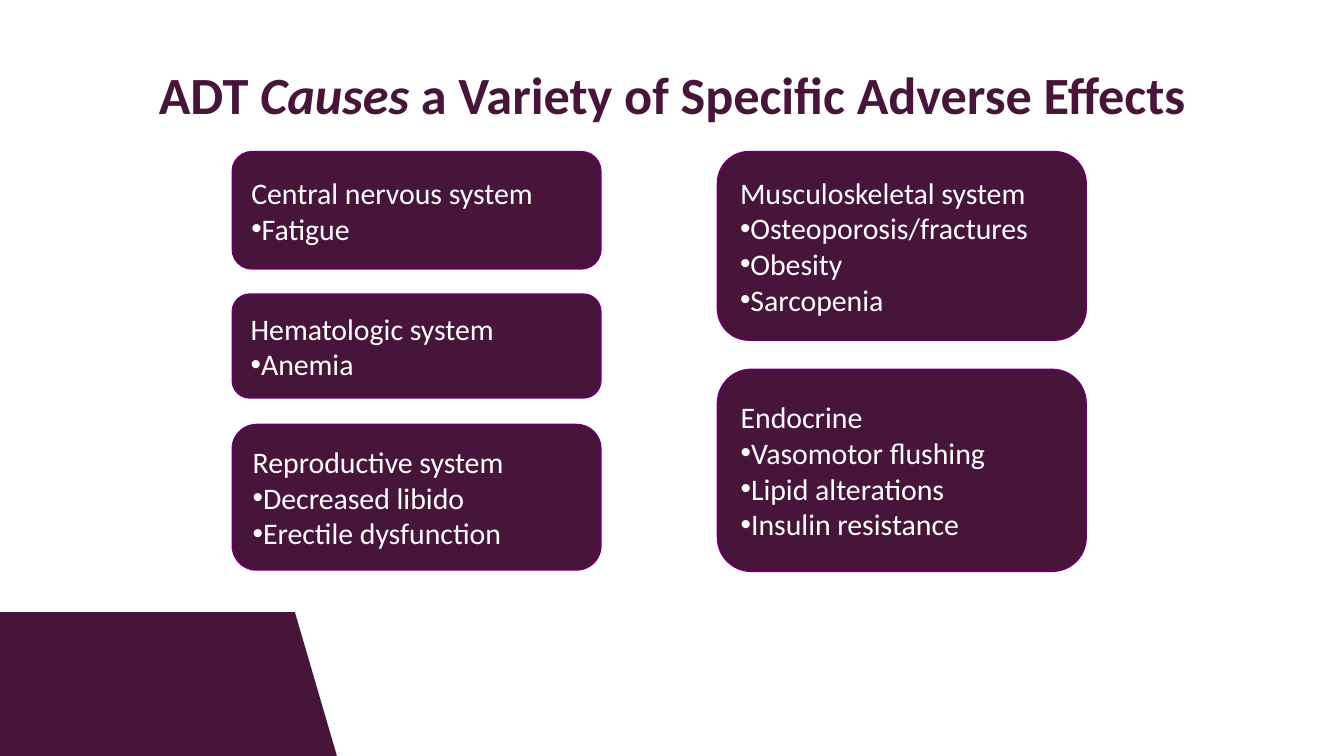
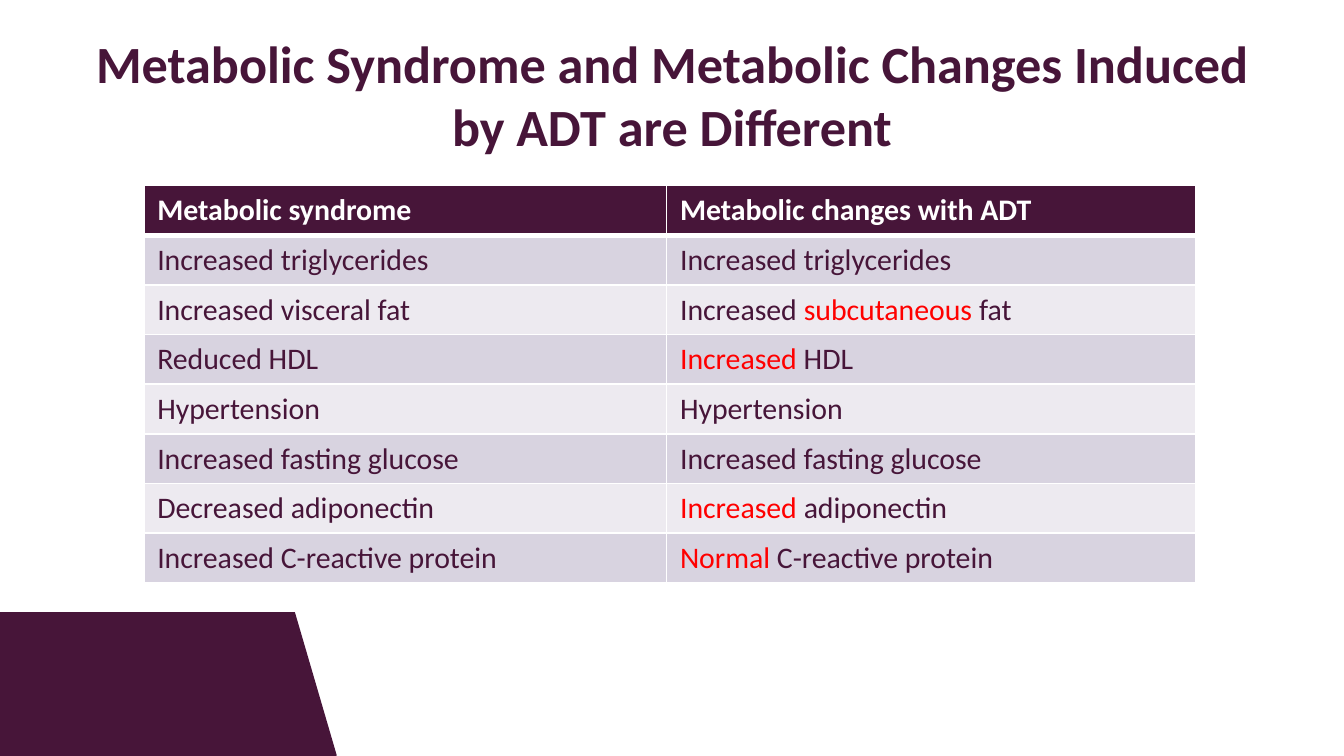
from lxml.etree import SubElement
from pptx import Presentation
from pptx.dml.color import RGBColor
from pptx.enum.shapes import MSO_SHAPE
from pptx.enum.text import MSO_ANCHOR, PP_ALIGN
from pptx.oxml.ns import qn
from pptx.util import Inches, Pt

PLUM = "471539"
EDGE = "660066"
WHITE = "FFFFFF"
RED = "FF0000"
BANDS = ["D8D3E0", "EDEAF0"]
FONT = "Calibri"

LEFT = 1.73
RIGHT = 5.34
WIDTH = 2.74
PANELS = [
    (LEFT, 1.13, 0.87, ["Central nervous system", "Fatigue"]),
    (LEFT, 3.16, 1.08, ["Reproductive system", "Decreased libido",
                        "Erectile dysfunction"]),
    (RIGHT, 1.13, 1.4, ["Musculoskeletal system", "Osteoporosis/fractures",
                        "Obesity", "Sarcopenia"]),
    (RIGHT, 2.75, 1.5, ["Endocrine", "Vasomotor flushing",
                        "Lipid alterations", "Insulin resistance"]),
    (LEFT, 2.19, 0.77, ["Hematologic system", "Anemia"]),
]

COLS = [3.89, 3.94]
ROW = 0.37
ROWS = [
    ("Metabolic syndrome", "Metabolic changes with ADT"),
    ("Increased triglycerides", "Increased triglycerides"),
    ("Increased visceral fat", "Increased *subcutaneous* fat"),
    ("Reduced HDL", "*Increased* HDL"),
    ("Hypertension", "Hypertension"),
    ("Increased fasting glucose", "Increased fasting glucose"),
    ("Decreased adiponectin", "*Increased *adiponectin"),
    ("Increased C-reactive protein", "*Normal* C-reactive protein"),
]


def paint(target, color):
    target.solid()
    target.fore_color.rgb = RGBColor.from_string(color)


def style(font, size, color, bold=False):
    font.name = FONT
    font.size = Pt(size)
    font.bold = bold
    font.color.rgb = RGBColor.from_string(color)


def add_runs(para, text, mark):
    for i, part in enumerate(text.split("*")):
        if part:
            run = para.add_run()
            run.text = part
            if i % 2:
                mark(run.font)


def slant(font):
    font.italic = True


def redden(font):
    font.color.rgb = RGBColor.from_string(RED)


def add_block(slide, kind, box, edge, weight):
    shape = slide.shapes.add_shape(kind, *map(Inches, box))
    shape.shadow.inherit = False
    paint(shape.fill, PLUM)
    paint(shape.line.fill, edge)
    shape.line.width = Pt(weight)
    return shape


def add_title(slide, text):
    box = slide.shapes.add_textbox(*map(Inches, (0.5, 0.23, 9, 0.94)))
    frame = box.text_frame
    frame.word_wrap = True
    frame.vertical_anchor = MSO_ANCHOR.MIDDLE
    para = frame.paragraphs[0]
    para.alignment = PP_ALIGN.CENTER
    style(para.font, 28, PLUM, True)
    add_runs(para, text, slant)


def add_page(deck, title):
    slide = deck.slides.add_slide(deck.slide_layouts[6])
    add_block(slide, MSO_SHAPE.RECTANGLE, (0, 4.56, 2.19, 1.06), PLUM, 0.75)
    add_block(slide, MSO_SHAPE.RIGHT_TRIANGLE, (2.19, 4.56, 0.31, 1.06),
              PLUM, 0.75)
    add_title(slide, title)
    return slide


def add_panel(slide, left, top, height, lines):
    shape = add_block(slide, MSO_SHAPE.ROUNDED_RECTANGLE,
                      (left, top, WIDTH, height), EDGE, 1)
    frame = shape.text_frame
    frame.word_wrap = True
    frame.vertical_anchor = MSO_ANCHOR.MIDDLE
    for i, line in enumerate(lines):
        para = frame.add_paragraph() if i else frame.paragraphs[0]
        para.text = line
        para.alignment = PP_ALIGN.LEFT
        if i:
            props = para._p.get_or_add_pPr()
            SubElement(props, qn("a:buFont"), typeface="Arial")
            SubElement(props, qn("a:buChar"), char="•")
        style(para.font, 16, WHITE)


def add_edges(cell, top, bottom):
    props = cell._tc.get_or_add_tcPr()
    for side, weight in zip("LRTB", (1, 1, top, bottom)):
        line = SubElement(props, qn(f"a:ln{side}"), w=str(Pt(weight)))
        fill = SubElement(line, qn("a:solidFill"))
        SubElement(fill, qn("a:srgbClr"), val=WHITE)


def fill_cell(cell, row, text):
    head = row == 0
    add_edges(cell, 3 if row == 1 else 1, 3 if head else 1)
    paint(cell.fill, PLUM if head else BANDS[(row - 1) % 2])
    cell.vertical_anchor = MSO_ANCHOR.MIDDLE
    para = cell.text_frame.paragraphs[0]
    style(para.font, 16, WHITE if head else PLUM, head)
    add_runs(para, text, redden)


def add_grid(slide, left, top):
    size = (left, top, sum(COLS), ROW * len(ROWS))
    table = slide.shapes.add_table(len(ROWS), len(COLS),
                                   *map(Inches, size)).table
    for col, width in zip(table.columns, COLS):
        col.width = Inches(width)
    for r, texts in enumerate(ROWS):
        table.rows[r].height = Inches(ROW)
        for c, text in enumerate(texts):
            fill_cell(table.cell(r, c), r, text)


def main():
    deck = Presentation()
    deck.slide_width = Inches(10)
    deck.slide_height = Inches(10) * 9 // 16

    slide = add_page(deck, "ADT *Causes* a Variety of Specific Adverse Effects")
    for panel in PANELS:
        add_panel(slide, *panel)

    slide = add_page(deck, "Metabolic Syndrome and Metabolic Changes "
                           "Induced by ADT are Different")
    add_grid(slide, 1.07, 1.38)

    deck.save("out.pptx")


if __name__ == "__main__":
    main()
